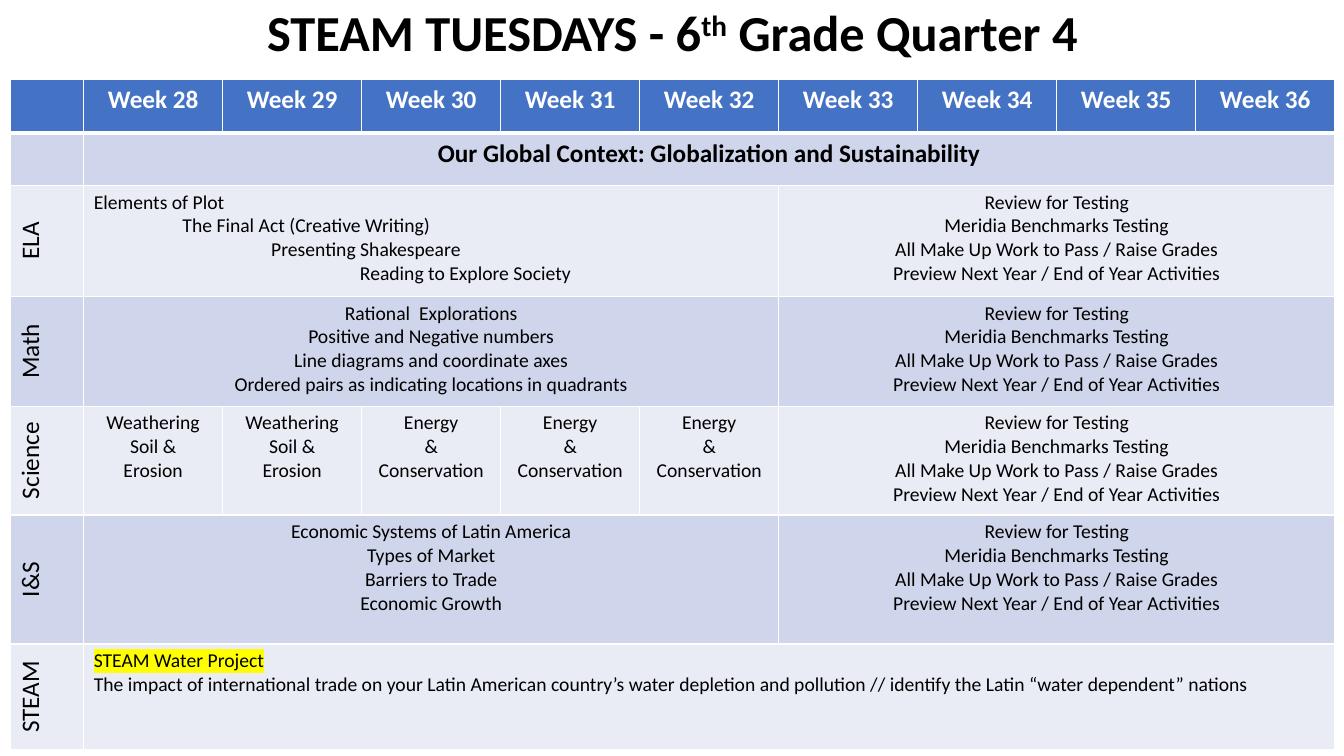
from lxml.etree import SubElement
from pptx import Presentation
from pptx.dml.color import RGBColor
from pptx.enum.text import MSO_ANCHOR as ANCHOR, PP_ALIGN as ALIGN
from pptx.oxml.ns import qn
from pptx.util import Inches, Pt

COLORS = {
    "text": "000000",
    "white": "FFFFFF",
    "header": "4472C4",
    "dark_band": "CFD5EA",
    "light_band": "E9EBF5",
    "highlight": "FFFF00",
}
FONT = "Calibri"
WEEKS = range(28, 37)
LABEL_WIDTH = 0.73
INDENT = 0.88
ROW_HEIGHTS = [0.53, 0.52, 1.1, 1.09, 1.08, 1.28, 1.05]

CONTEXT = "Our Global Context: Globalization and Sustainability"
REVIEW = [
    "Review for Testing",
    "Meridia Benchmarks Testing",
    "All Make Up Work to Pass / Raise Grades",
    "Preview Next Year / End of Year Activities",
]
PLOT = [
    "Elements of Plot",
    "The Final Act (Creative Writing)",
    "Presenting Shakespeare",
    "Reading to Explore Society",
]
RATIONAL = [
    "Rational  Explorations",
    "Positive and Negative numbers",
    "Line diagrams and coordinate axes",
    "Ordered pairs as indicating locations in quadrants",
]
WEATHERING = ["Weathering", "Soil &", "Erosion"]
ENERGY = ["Energy", "&", "Conservation"]
ECONOMICS = [
    "Economic Systems of Latin America",
    "Types of Market",
    "Barriers to Trade",
    "Economic Growth",
]
PROJECT = "STEAM Water Project"
IMPACT = (
    "The impact of international trade on your Latin American country’s water "
    "depletion and pollution // identify the Latin “water dependent” nations"
)
SUBJECTS = [
    ("ELA", [(PLOT, 5, {"align": ALIGN.LEFT, "step": INDENT}), (REVIEW, 4, {})]),
    ("Math", [(RATIONAL, 5, {}), (REVIEW, 4, {})]),
    ("Science", [(WEATHERING, 1, {})] * 2 + [(ENERGY, 1, {})] * 3 + [(REVIEW, 4, {})]),
    ("I&S", [(ECONOMICS, 5, {}), (REVIEW, 4, {})]),
    ("STEAM", [([PROJECT, IMPACT], 9, {"align": ALIGN.LEFT, "marked": PROJECT})]),
]


def add_run(p, text, size=14, bold=False, color="text", baseline=0, highlight=None):
    """Append a formatted run to a paragraph."""
    r = p.add_run()
    r.text = text
    r.font.size = Pt(size)
    r.font.bold = bold
    r.font.color.rgb = RGBColor.from_string(COLORS[color])
    rPr = r.font._element
    if baseline:
        rPr.set("baseline", str(baseline * 1000))
    if highlight:
        mark = SubElement(rPr, qn("a:highlight"))
        SubElement(mark, qn("a:srgbClr"), val=COLORS[highlight])
    r.font.name = FONT


def write_lines(cell, lines, align=ALIGN.CENTER, step=0, marked=None, **fmt):
    """Fill a cell with one paragraph per line, each indented one step further."""
    tf = cell.text_frame
    for i, line in enumerate(lines):
        p = tf.paragraphs[0] if i == 0 else tf.add_paragraph()
        p.alignment = align
        if step:
            p._p.get_or_add_pPr().set("marL", str(Inches(step * i)))
        add_run(p, line, highlight="highlight" if line == marked else None, **fmt)


def style_cell(cell, fill, bottom=1):
    """Give a cell white borders and a solid fill."""
    tcPr = cell._tc.get_or_add_tcPr()
    for side, width in (("L", 1), ("R", 1), ("T", 1), ("B", bottom)):
        ln = SubElement(tcPr, qn(f"a:ln{side}"), w=str(Pt(width)))
        line_fill = SubElement(ln, qn("a:solidFill"))
        SubElement(line_fill, qn("a:srgbClr"), val=COLORS["white"])
    cell.fill.solid()
    cell.fill.fore_color.rgb = RGBColor.from_string(COLORS[fill])


def add_title(s, left, top, width, height):
    """Place the slide title in its placeholder."""
    sp = s.shapes.title
    sp.left, sp.top, sp.width, sp.height = map(Inches, (left, top, width, height))
    tf = sp.text_frame
    tf.word_wrap = True
    tf.vertical_anchor = ANCHOR.MIDDLE
    p = tf.paragraphs[0]
    p.alignment = ALIGN.CENTER
    p.line_spacing = 0.9
    for text, baseline in (("STEAM TUESDAYS - 6", 0), ("th", 30), (" Grade Quarter 4", 0)):
        add_run(p, text, size=36, bold=True, baseline=baseline)


def add_subject(table, row, label, blocks):
    """Write a subject's rotated label and its blocks of weeks."""
    head = table.cell(row, 0)
    head._tc.get_or_add_tcPr().set("vert", "vert270")
    write_lines(head, [label], size=18)
    col = 1
    for lines, span, fmt in blocks:
        cell = table.cell(row, col)
        if span > 1:
            cell.merge(table.cell(row, col + span - 1))
        write_lines(cell, lines, **fmt)
        col += span


def add_schedule(s, left, top, width, height):
    """Build the table of weeks and subjects."""
    box = map(Inches, (left, top, width, height))
    table = s.shapes.add_table(len(ROW_HEIGHTS), len(WEEKS) + 1, *box).table
    table.horz_banding = False
    for row, row_height in zip(table.rows, ROW_HEIGHTS):
        row.height = Inches(row_height)
    for i, col in enumerate(table.columns):
        col.width = Inches((width - LABEL_WIDTH) / len(WEEKS) if i else LABEL_WIDTH)
    for i, row in enumerate(table.rows):
        for cell in row.cells:
            if i == 0:
                style_cell(cell, "header", bottom=3)
            else:
                style_cell(cell, "dark_band" if i % 2 else "light_band")

    for col, week in enumerate(WEEKS, 1):
        write_lines(table.cell(0, col), [f"Week {week}"], size=18, bold=True, color="white")
    context = table.cell(1, 1)
    context.merge(table.cell(1, len(WEEKS)))
    write_lines(context, [CONTEXT], size=18, bold=True)
    for row, (label, blocks) in enumerate(SUBJECTS, 2):
        add_subject(table, row, label, blocks)


def main():
    """Create and save the presentation."""
    prs = Presentation()
    prs.slide_width, prs.slide_height = Inches(13.33), Inches(7.5)
    s = prs.slides.add_slide(prs.slide_layouts[5])
    add_title(s, 0.92, 0, 11.5, 0.7)
    add_schedule(s, 0.1, 0.79, 13.14, sum(ROW_HEIGHTS))
    prs.save("out.pptx")


if __name__ == "__main__":
    main()
